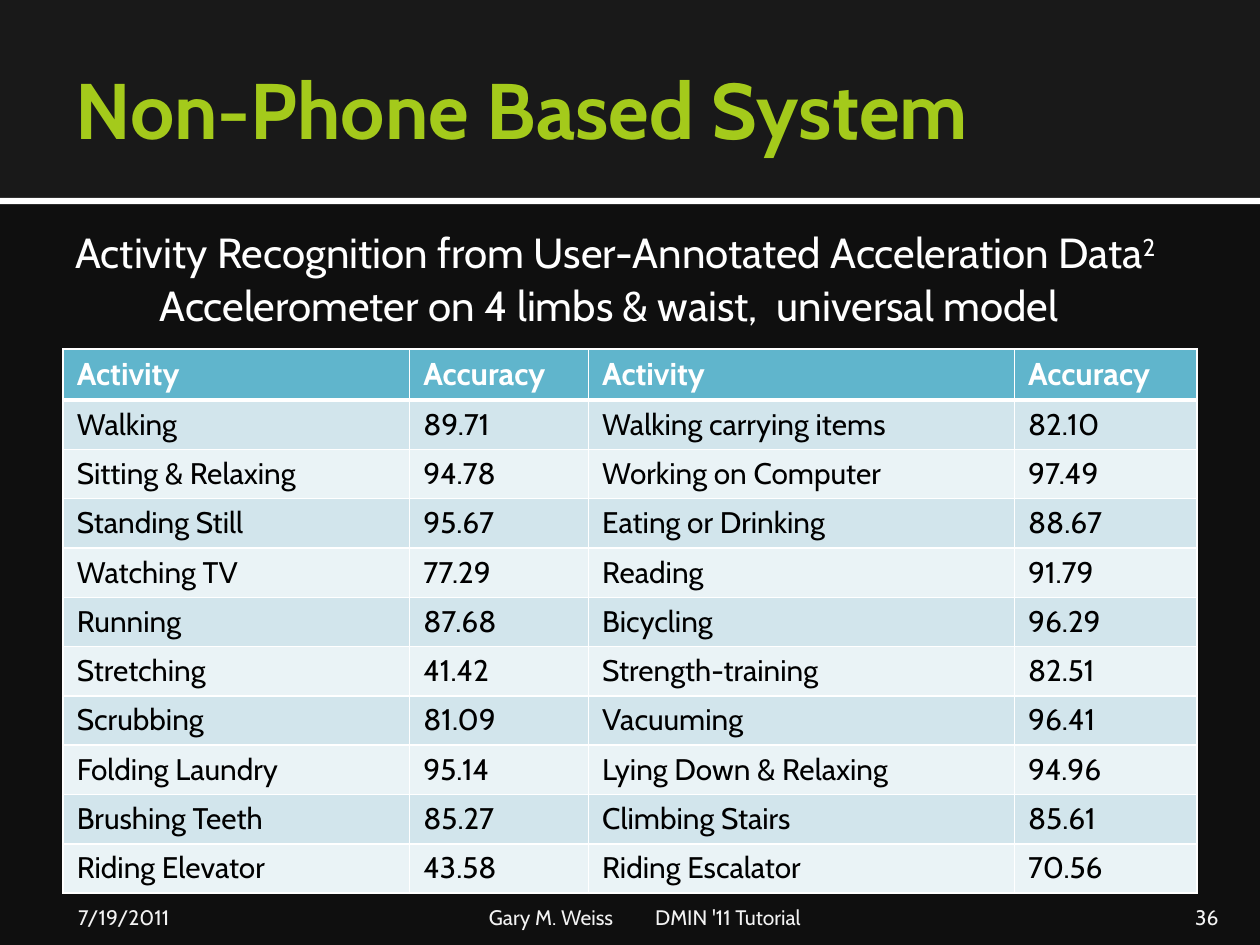
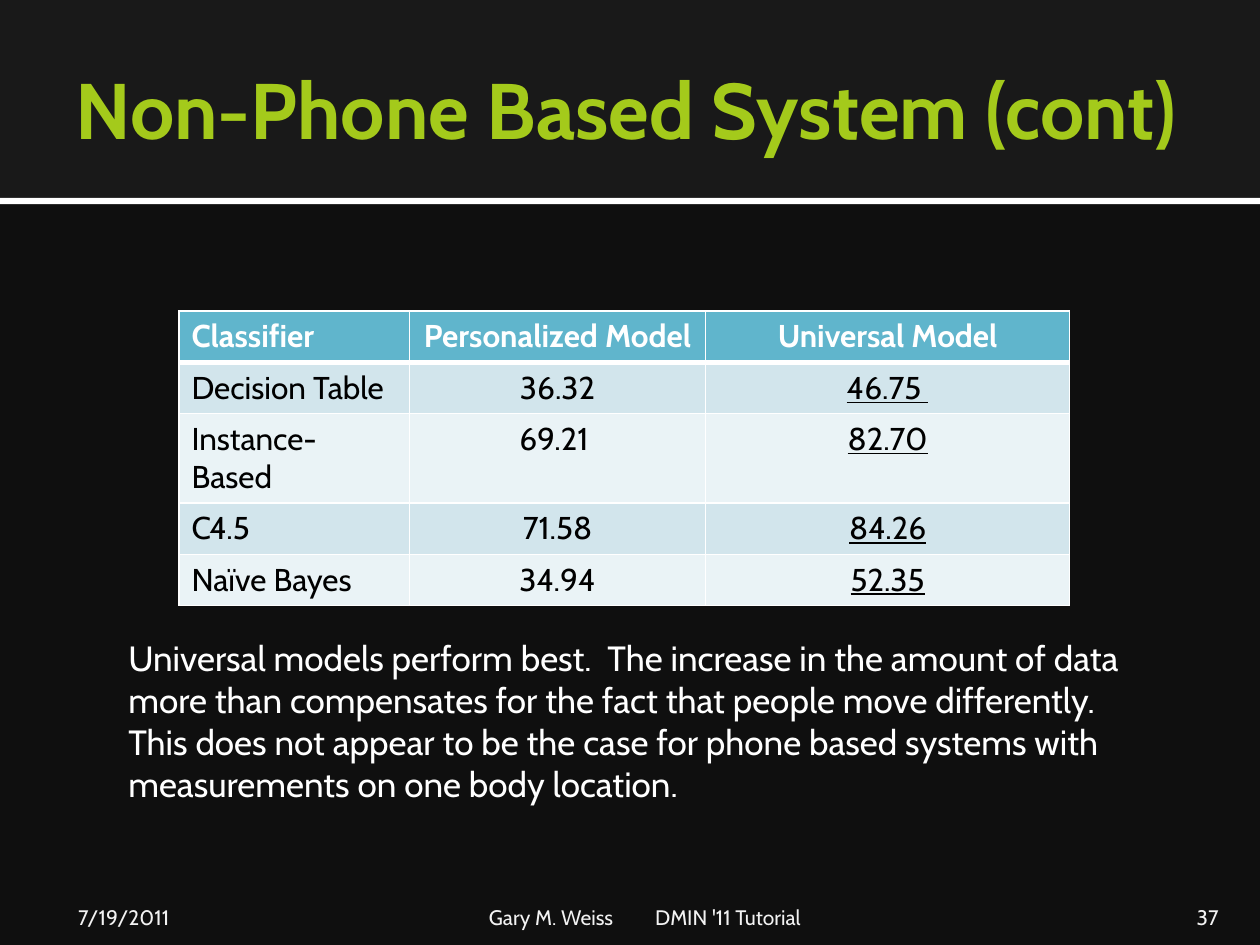
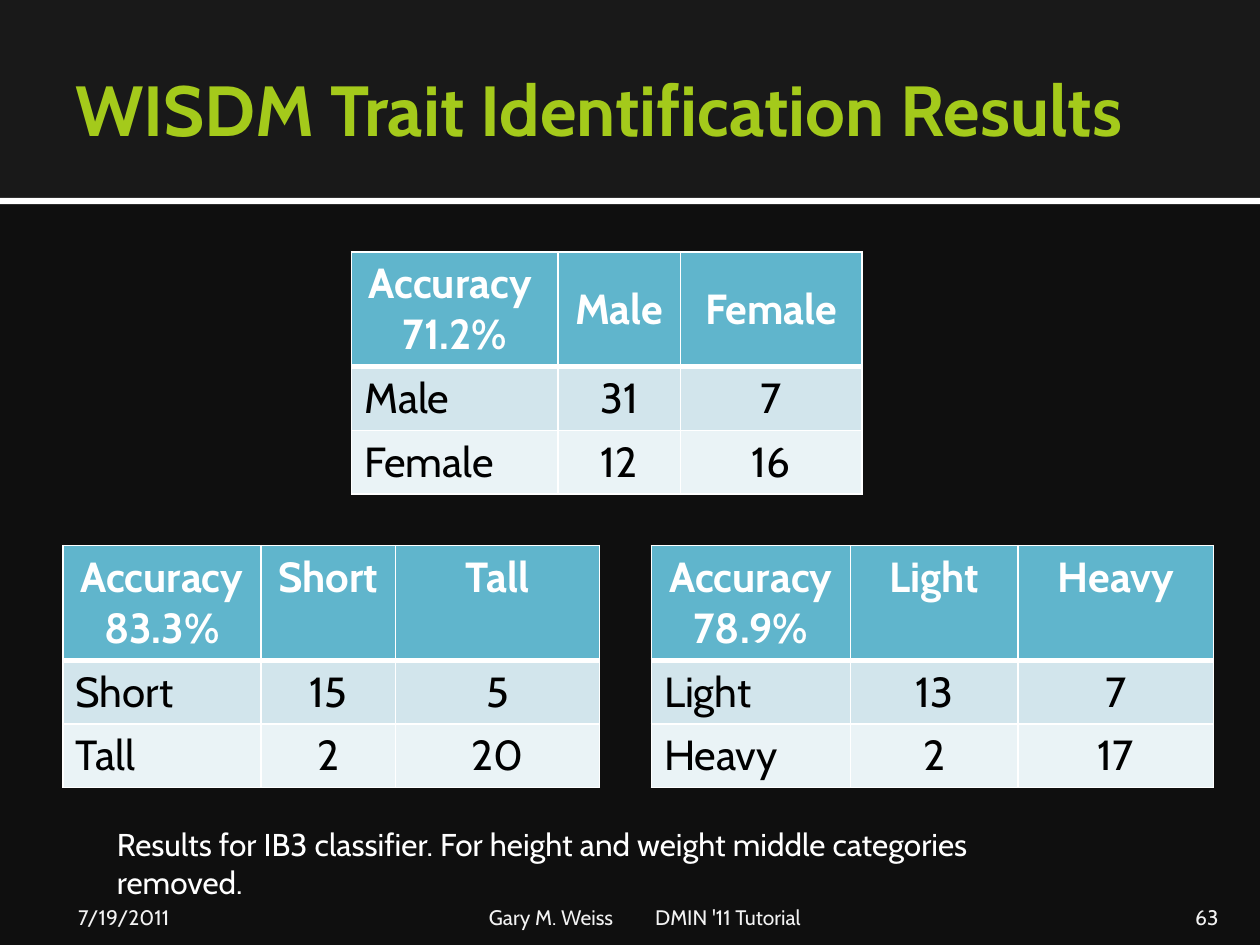
"""Build three slides on activity and trait recognition results."""
from dataclasses import dataclass
from itertools import product

from lxml.etree import SubElement
from pptx import Presentation
from pptx.dml.color import RGBColor
from pptx.enum.shapes import MSO_SHAPE
from pptx.enum.text import MSO_ANCHOR, MSO_AUTO_SIZE, PP_ALIGN
from pptx.oxml.ns import qn
from pptx.util import Inches, Pt

FONT = "Cabin"
WHITE = RGBColor(0xFF, 0xFF, 0xFF)
BLACK = RGBColor(0x00, 0x00, 0x00)
BACK = RGBColor(0x0F, 0x0F, 0x0F)
BAND = RGBColor(0x19, 0x19, 0x19)
LIME = RGBColor(0xA4, 0xCA, 0x1B)
PALE = RGBColor(0xF2, 0xF2, 0xF2)
HEAD = RGBColor(0x60, 0xB5, 0xCC)
ROWS = (RGBColor(0xEA, 0xF3, 0xF6), RGBColor(0xD2, 0xE5, 0xEC))
WIDE, HIGH = Inches(10), Inches(7.5)
LEFT, MID, RIGHT = PP_ALIGN.LEFT, PP_ALIGN.CENTER, PP_ALIGN.RIGHT
INSET = (0.1, 0.05, 0.1, 0.05)


@dataclass(frozen=True)
class Area:
    """A place in percent of the slide's width and height."""
    x: float
    y: float
    w: float
    h: float

    def box(self) -> tuple[int, int, int, int]:
        """Give left, top, width and height in EMU."""
        return across(self.x), down(self.y), across(self.w), down(self.h)


@dataclass(frozen=True)
class Style:
    """The look of a block of text."""
    size: float
    color: RGBColor = WHITE
    bold: bool = False
    line: bool = False
    align: PP_ALIGN = LEFT


@dataclass(frozen=True)
class Label:
    """A text box with its place and look."""
    text: str
    area: Area
    style: Style
    inset: tuple = INSET
    anchor: MSO_ANCHOR = MSO_ANCHOR.TOP
    power: str = ""
    tab: float = 0


@dataclass(frozen=True)
class Grid:
    """A table whose columns and rows are percent of the slide."""
    x: float
    y: float
    cols: tuple
    rows: tuple
    cells: tuple
    head: float
    body: float
    side: float = 0.1
    center: bool = True
    anchor: MSO_ANCHOR = MSO_ANCHOR.TOP
    under: int = -1


@dataclass(frozen=True)
class Page:
    """The content of one slide."""
    title: str
    number: str
    grids: tuple
    notes: tuple
    size: float = 45


def across(part: float) -> int:
    """Turn percent of the width into EMU."""
    return round(WIDE * part / 100)


def down(part: float) -> int:
    """Turn percent of the height into EMU."""
    return round(HIGH * part / 100)


def dress(para, style: Style) -> None:
    """Format a paragraph and its runs."""
    para.alignment = style.align
    for run in para.runs:
        font = run.font
        font.name, font.size, font.bold = FONT, Pt(style.size), style.bold
        font.underline = style.line
        font.color.rgb = style.color


def fit(frame, inset: tuple, anchor: MSO_ANCHOR) -> None:
    """Set the wrap, insets and anchor of a text frame."""
    frame.word_wrap = True
    frame.auto_size = MSO_AUTO_SIZE.NONE
    frame.vertical_anchor = anchor
    (frame.margin_left, frame.margin_top,
     frame.margin_right, frame.margin_bottom) = map(Inches, inset)


def write(slide, label: Label) -> None:
    """Draw a text box."""
    box = slide.shapes.add_textbox(*label.area.box())
    frame = box.text_frame
    fit(frame, label.inset, label.anchor)
    para = frame.paragraphs[0]
    para.text = label.text
    if label.power:
        para.add_run().text = label.power
    dress(para, label.style)
    if label.power:
        box.element.findall(".//" + qn("a:rPr"))[-1].set("baseline", "30000")
    if label.tab:
        props = box.element.find(".//" + qn("a:pPr"))
        stops = SubElement(props, qn("a:tabLst"))
        SubElement(stops, qn("a:tab"), pos=str(across(label.tab)), algn="l")


def edge(cell, row: int) -> None:
    """Draw white cell borders, thick below the header."""
    props = cell._tc.get_or_add_tcPr()
    thick = {"T": row == 1, "B": row == 0}
    for spot, side in enumerate("LRTB"):
        width = Pt(3 if thick.get(side) else 1)
        line = SubElement(props, qn(f"a:ln{side}"), w=str(width))
        fill = SubElement(line, qn("a:solidFill"))
        SubElement(fill, qn("a:srgbClr"), val=str(WHITE))
        props.insert(spot, line)


def chart(slide, grid: Grid) -> None:
    """Draw a table."""
    area = Area(grid.x, grid.y, sum(grid.cols), sum(grid.rows))
    deep, wide = len(grid.rows), len(grid.cols)
    table = slide.shapes.add_table(deep, wide, *area.box()).table
    for col, part in zip(table.columns, grid.cols):
        col.width = across(part)
    for row, part in zip(table.rows, grid.rows):
        row.height = down(part)
    for r, c in product(range(deep), range(wide)):
        cell, top = table.cell(r, c), r == 0
        cell.margin_left = cell.margin_right = Inches(grid.side)
        cell.vertical_anchor = grid.anchor if top else MSO_ANCHOR.TOP
        cell.fill.solid()
        cell.fill.fore_color.rgb = HEAD if top else ROWS[r % 2]
        edge(cell, r)
        para = cell.text_frame.paragraphs[0]
        para.text = grid.cells[r][c]
        lead = c == 0 and (not top or grid.under > 0)
        dress(para, Style(
            grid.head if top else grid.body, WHITE if top else BLACK, top,
            not top and c == grid.under,
            MID if grid.center and not lead else LEFT))


def bands(slide, layout) -> None:
    """Place the title band and its rule on the shared layout."""
    parts = ((Area(0, 20.93, 100, 0.67), WHITE), (Area(0, 0, 100, 20.93), BAND))
    for spot, (area, color) in enumerate(parts):
        band = slide.shapes.add_shape(MSO_SHAPE.RECTANGLE, *area.box())
        band.shadow.inherit = False
        band.fill.solid()
        band.fill.fore_color.rgb = color
        band.line.fill.background()
        band.element.nvSpPr.cNvPr.set("id", str(50 + spot))
        layout.shapes.element.insert(2 + spot, band.element)


def foot(slide, number: str) -> None:
    """Draw the date, the source and the slide number."""
    parts = (("7/19/2011", 5, 23.3, 0.12, 0.05, LEFT, 0),
             ("Gary M. Weiss\tDMIN '11 Tutorial", 38.3, 50.8, 0.05, 0.05, LEFT, 13.2),
             (number, 89.7, 8, 0.1, 0.1, RIGHT, 0))
    for text, x, w, near, far, align, tab in parts:
        write(slide, Label(text, Area(x, 94.4, w, 4), Style(12, PALE, align=align),
                           (near, 0.05, far, 0), MSO_ANCHOR.BOTTOM, tab=tab))


def build(slide, page: Page) -> None:
    """Fill one slide."""
    title = slide.shapes.title
    title.left, title.top, title.width, title.height = Area(5, 2.27, 90, 18.27).box()
    title.text_frame.text = page.title
    fit(title.text_frame, (0.1, 0.05, 0.05, 0.05), MSO_ANCHOR.MIDDLE)
    dress(title.text_frame.paragraphs[0], Style(page.size, LIME, True))
    for grid in page.grids:
        chart(slide, grid)
    foot(slide, page.number)
    for note in page.notes:
        write(slide, note)


def trait(x: float, y: float, cols: tuple, score: str, pair: tuple,
          counts: tuple, anchor: MSO_ANCHOR = MSO_ANCHOR.TOP) -> Grid:
    """Describe a two-class confusion table."""
    cells = ((score, *pair), *((name, *row) for name, row in zip(pair, counts)))
    return Grid(x, y, cols, (12.1, 6.7, 6.7), cells, 24, 24, anchor=anchor)


ACTS = (
    ("Activity", "Accuracy", "Activity", "Accuracy"),
    ("Walking", "89.71", "Walking carrying items", "82.10"),
    ("Sitting & Relaxing", "94.78", "Working on Computer", "97.49"),
    ("Standing Still", "95.67", "Eating or Drinking", "88.67"),
    ("Watching TV", "77.29", "Reading", "91.79"),
    ("Running", "87.68", "Bicycling", "96.29"),
    ("Stretching", "41.42", "Strength-training", "82.51"),
    ("Scrubbing", "81.09", "Vacuuming", "96.41"),
    ("Folding Laundry", "95.14", "Lying Down & Relaxing", "94.96"),
    ("Brushing Teeth", "85.27", "Climbing Stairs", "85.61"),
    ("Riding Elevator", "43.58", "Riding Escalator", "70.56"),
)
MODELS = (
    ("Classifier", "Personalized Model", "Universal Model"),
    ("Decision Table", "36.32", "46.75 "),
    ("Instance-Based", "69.21 ", "82.70"),
    ("C4.5", "71.58", "84.26"),
    ("Naïve Bayes", "34.94", "52.35"),
)
PAGES = (
    Page("Non-Phone Based System", "36",
         (Grid(5, 36.93, (27.5, 14.2, 33.8, 14.5), (5.22,) * 11, ACTS, 18, 17,
               side=0.11, center=False),),
         (Label("Activity Recognition from User-Annotated Acceleration Data",
                Area(5, 23.33, 90.8, 6.67), Style(24), power="2"),
          Label("Accelerometer on 4 limbs & waist,  universal model",
                Area(11.7, 28.93, 77.5, 6.67), Style(24)))),
    Page("Non-Phone Based System (cont)", "37",
         (Grid(14.2, 32.93, (18.3, 23.5, 28.9), (5.42,) * 5, MODELS, 18, 18,
               under=2),),
         (Label("Universal models perform best.  The increase in the amount of data "
                "more than compensates for the fact that people move differently. "
                "This does not appear to be the case for phone based systems with "
                "measurements on one body location.",
                Area(9.2, 66.67, 83.3, 19.33), Style(20)),)),
    Page("WISDM Trait Identification Results", "63",
         (trait(27.9, 26.67, (16.4, 9.7, 14.4), "Accuracy \n71.2%",
                ("Male", "Female"), (("31", "7"), ("12", "16")), MSO_ANCHOR.MIDDLE),
          trait(5, 57.73, (15.7, 10.7, 16.2), "Accuracy\n83.3%",
                ("Short", "Tall"), (("15", "5"), ("2", "20"))),
          trait(51.7, 57.73, (15.8, 13.3, 15.5), "Accuracy\n78.9%",
                ("Light", "Heavy"), (("13", "7"), ("2", "17")))),
         (Label("Results for IB3 classifier. For height and weight middle "
                "categories removed.", Area(8.3, 86.67, 80, 5.33), Style(18)),),
         40.5),
)


def main() -> None:
    """Build and save the deck."""
    deck = Presentation()
    deck.slide_width, deck.slide_height = WIDE, HIGH
    back = deck.slide_master.background.fill
    back.solid()
    back.fore_color.rgb = BACK
    layout = deck.slide_layouts[5]
    slides = [deck.slides.add_slide(layout) for _ in PAGES]
    bands(slides[0], layout)
    for slide, page in zip(slides, PAGES):
        build(slide, page)
    deck.save("out.pptx")


if __name__ == "__main__":
    main()
